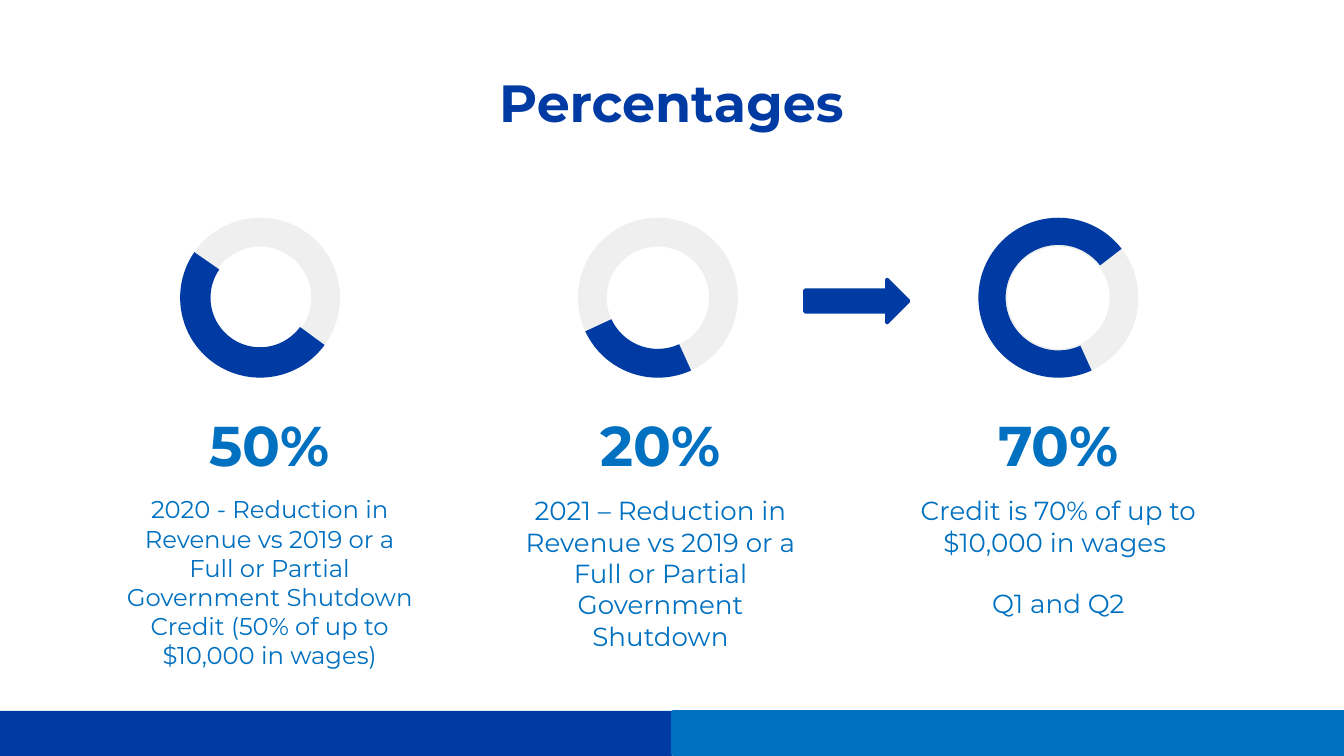
from dataclasses import dataclass

from lxml.etree import SubElement
from pptx import Presentation
from pptx.dml.color import RGBColor
from pptx.enum.shapes import MSO_SHAPE
from pptx.enum.text import MSO_ANCHOR, MSO_AUTO_SIZE, PP_ALIGN
from pptx.oxml.ns import qn
from pptx.util import Inches, Pt

NAVY, BLUE, GRAY = "003BA3", "0070C0", "EFEFEF"
RING, RING_TOP = 1.19, 1.62
WIDE = 2.37


@dataclass
class Stat:
    left: float      # text column
    ring: float      # left edge of the ring
    start: float     # arc angles in degrees, clockwise from the right
    end: float
    thick: float
    value: str
    lines: tuple[str, ...]
    size: int
    tall: float = 0.71


STATS = [
    Stat(0.82, 1.34, 36.27, 214.65, 0.19, "50%",
         ("2020 - Reduction in Revenue vs 2019 or a Full or Partial "
          "Government Shutdown Credit (50% of up to $10,000 in wages)",), 13),
    Stat(3.73, 4.3, 65.43, 155.14, 0.18, "20%",
         ("2021 – Reduction in Revenue vs 2019 or a Full or Partial "
          "Government Shutdown",), 14),
    Stat(6.69, 7.28, 65.43, 322.25, 0.17, "70%",
         ("Credit is 70% of up to $10,000 in wages ", "Q1 and Q2"), 14, 1.07),
]


def color(code: str) -> RGBColor:
    return RGBColor.from_string(code)


def assign(item, values: dict) -> None:
    for name, value in values.items():
        setattr(item, name, value)


def place(shape, box: tuple) -> None:
    assign(shape, dict(zip(("left", "top", "width", "height"), map(Inches, box))))


def write(shape, lines: tuple, size: int, code: str, bold: bool = False,
          anchor=MSO_ANCHOR.TOP, after: int = 0) -> None:
    frame = shape.text_frame
    frame.text = "\n".join(lines)
    pad = Inches(0.1)
    assign(frame, {"word_wrap": True, "auto_size": MSO_AUTO_SIZE.NONE,
                   "vertical_anchor": anchor, "margin_left": pad,
                   "margin_right": pad, "margin_top": pad, "margin_bottom": pad})
    for para in frame.paragraphs:
        assign(para, {"alignment": PP_ALIGN.CENTER, "line_spacing": 1.0,
                      "space_before": Pt(0), "space_after": Pt(after)})
        # No bullet and no hanging indent
        props = para._p.get_or_add_pPr()
        props.set("marL", "0")
        props.set("indent", "0")
        SubElement(props, qn("a:buNone"))
        for run in para.runs:
            assign(run.font, {"name": "Montserrat", "size": Pt(size), "bold": bold})
            run.font.color.rgb = color(code)


def draw(slide, kind, box: tuple, code: str, adjust: tuple = (),
         line: float = 0) -> None:
    shape = slide.shapes.add_shape(kind, *map(Inches, box))
    shape.shadow.inherit = False
    shape.fill.solid()
    shape.fill.fore_color.rgb = color(code)
    if line:
        shape.line.color.rgb = color(code)
        shape.line.width = Pt(line)
    else:
        shape.line.fill.background()
    for spot, value in enumerate(adjust):
        shape.adjustments[spot] = value


def show(slide, stat: Stat, body) -> None:
    # Ring: an angle is stored in 1/60000 degree, adjustments in 1/100000
    box = (stat.ring, RING_TOP, RING, RING)
    draw(slide, MSO_SHAPE.DONUT, box, GRAY, (0.18,))
    draw(slide, MSO_SHAPE.BLOCK_ARC, box, NAVY,
         (stat.start * 0.6, stat.end * 0.6, stat.thick))
    # Figure and caption
    figure = slide.shapes.add_textbox(*map(Inches, (stat.left, 2.95, WIDE, 0.71)))
    write(figure, (stat.value,), 30, BLUE, True, MSO_ANCHOR.MIDDLE)
    place(body, (stat.left, 3.58, WIDE, stat.tall))
    write(body, stat.lines, stat.size, BLUE, after=16)


def main() -> None:
    deck = Presentation()
    # Widescreen, 16 to 9
    assign(deck, {"slide_width": Inches(10), "slide_height": Inches(10 * 9 / 16)})
    slide = deck.slides.add_slide(deck.slide_layouts[4])
    title, *bodies, spare = slide.placeholders
    spare.element.getparent().remove(spare.element)

    # Footer bars
    draw(slide, MSO_SHAPE.RECTANGLE, (0, 5.29, 5, 0.34), NAVY)
    draw(slide, MSO_SHAPE.RECTANGLE, (5.01, 5.3, 4.99, 0.31), BLUE, line=2)

    # Title
    place(title, (0.78, 0.42, 8.43, 0.71))
    write(title, ("Percentages",), 28, NAVY, True)

    # Three columns, the second leading to the third
    for stat, body in zip(STATS, bodies):
        show(slide, stat, body)
    draw(slide, MSO_SHAPE.RIGHT_ARROW, (5.99, 2.08, 0.77, 0.32), NAVY, line=2)

    deck.save("out.pptx")


if __name__ == "__main__":
    main()
